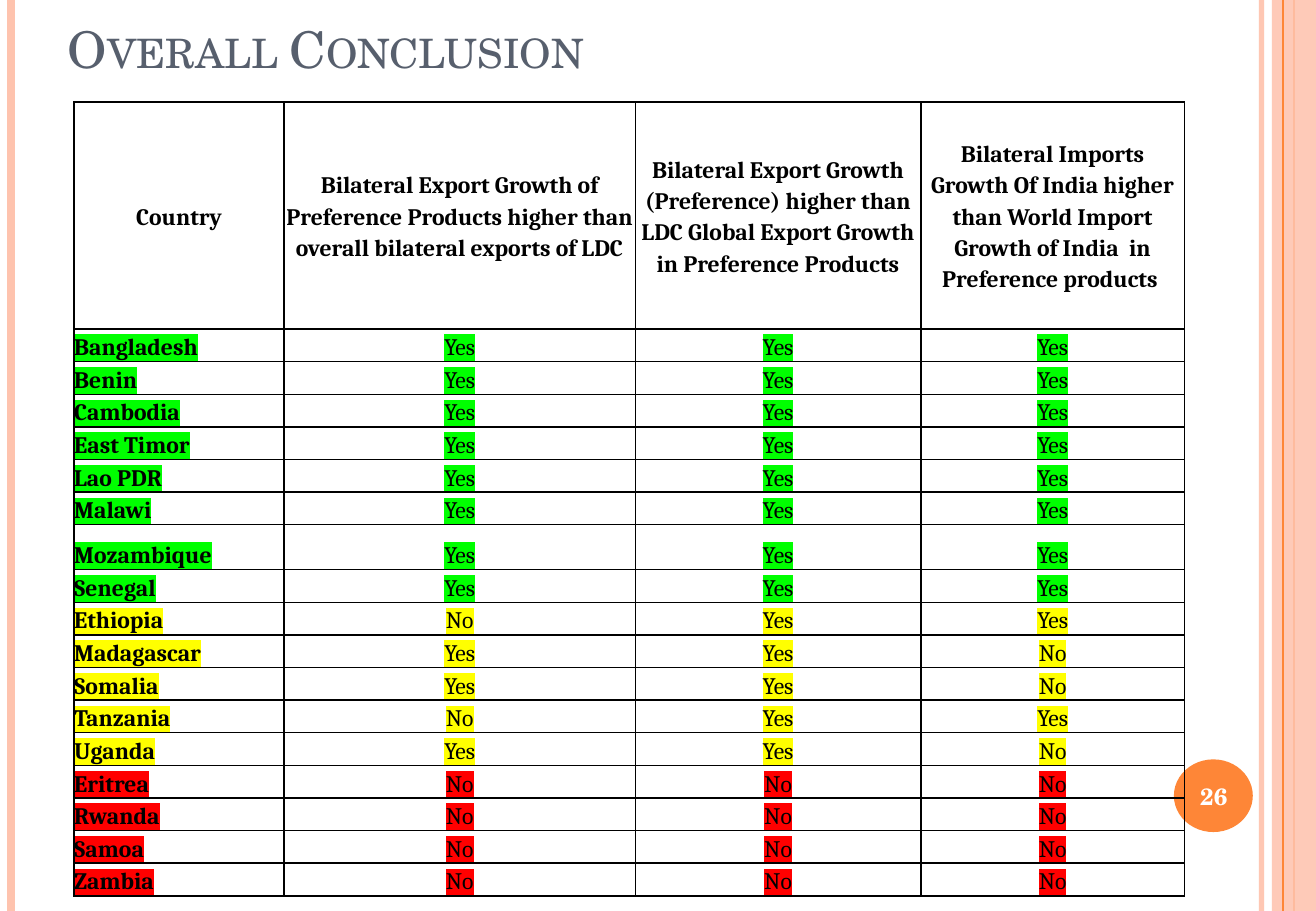
from typing import Any, NamedTuple

from lxml import etree
from pptx import Presentation
from pptx.dml.color import RGBColor
from pptx.enum.shapes import MSO_CONNECTOR, MSO_SHAPE
from pptx.enum.text import MSO_ANCHOR, PP_ALIGN
from pptx.oxml import parse_xml
from pptx.oxml.ns import qn
from pptx.util import Cm, Pt

STRAIGHT = MSO_CONNECTOR.STRAIGHT
RECTANGLE, OVAL = MSO_SHAPE.RECTANGLE, MSO_SHAPE.OVAL
LEFT, CENTER = PP_ALIGN.LEFT, PP_ALIGN.CENTER
MIDDLE, BOTTOM = MSO_ANCHOR.MIDDLE, MSO_ANCHOR.BOTTOM

DRAWING_NS = "http://schemas.openxmlformats.org/drawingml/2006/main"
ORANGE, PEACH, SLATE = "FE8637", "FEC3AE", "575F6D"
BLACK, WHITE = "000000", "FFFFFF"
GREEN, YELLOW, RED = "00FF00", "FFFF00", "FF0000"
TITLE_FONT, TABLE_FONT = "TeX Gyre Schola", "Cambria"
PAGE_WIDTH, PAGE_HEIGHT = 27.51, 19.05
NO_INSETS = dict(margin_left=0, margin_right=0, margin_top=0, margin_bottom=0)


class Stripe(NamedTuple):
    x: float
    colour: str
    points: float
    opacity: int = 100


class Panel(NamedTuple):
    shape: int
    left: float
    top: float
    width: float
    height: float
    colour: str
    opacity: int = 100


class Country(NamedTuple):
    name: str
    verdicts: str  # one Y or N per criterion
    height: float = 0.65


EDGE_STRIPES = [
    Stripe(26.37, PEACH, 3, 93),
    Stripe(0.23, PEACH, 4.5),
    Stripe(27.05, ORANGE, 1.5),
]
INNER_STRIPE = Stripe(26.82, ORANGE, 0.75)
SIDE_BAND = Panel(RECTANGLE, 26.59, 0, 0.92, PAGE_HEIGHT, PEACH, 87)
NUMBER_DISC = Panel(OVAL, 24.54, 15.88, 1.65, 1.52, ORANGE)

COLUMN_WIDTHS = [4.39, 7.34, 5.97, 5.51]
HEADER_HEIGHT = 4.75
HEADERS = [
    "Country",
    "Bilateral Export Growth of Preference Products higher than overall bilateral exports of LDC",
    "Bilateral Export Growth (Preference) higher than LDC Global Export Growth in Preference Products",
    "Bilateral Imports Growth Of India higher than World Import Growth of India  in Preference products ",
]
COUNTRIES = [
    Country("Bangladesh", "YYY"),
    Country("Benin", "YYY"),
    Country("Cambodia", "YYY"),
    Country("East Timor", "YYY"),
    Country("Lao PDR", "YYY"),
    Country("Malawi", "YYY"),
    Country("Mozambique", "YYY", 0.94),
    Country("Senegal", "YYY"),
    Country("Ethiopia", "NYY"),
    Country("Madagascar", "YYN"),
    Country("Somalia", "YYN"),
    Country("Tanzania", "NYY"),
    Country("Uganda", "YYN"),
    Country("Eritrea", "NNN"),
    Country("Rwanda", "NNN"),
    Country("Samoa", "NNN"),
    Country("Zambia", "NNN"),
]
WORDS = {"Y": "Yes", "N": "No"}


def rgb(colour: str) -> RGBColor:
    return RGBColor.from_string(colour)


def apply(target: Any, values: dict) -> None:
    for name, value in values.items():
        setattr(target, name, value)


def set_solid(fill: Any, holder: Any, colour: str, opacity: int) -> None:
    """Fill with a colour; holder is the XML element around the fill."""
    fill.solid()
    fill.fore_color.rgb = rgb(colour)
    if opacity < 100:
        tint = holder.find(f"{qn('a:solidFill')}/{qn('a:srgbClr')}")
        etree.SubElement(tint, qn("a:alpha")).set("val", str(opacity * 1000))


def add_stripe(page: Any, stripe: Stripe) -> None:
    x = Cm(stripe.x)
    line = page.shapes.add_connector(STRAIGHT, x, 0, x, Cm(PAGE_HEIGHT))
    line.line.width = Pt(stripe.points)
    properties = line._element.spPr
    set_solid(line.line.fill, properties.find(qn("a:ln")), stripe.colour, stripe.opacity)
    etree.SubElement(properties, qn("a:effectLst"))


def add_panel(page: Any, panel: Panel) -> None:
    shape = page.shapes.add_shape(panel.shape, *map(Cm, panel[1:5]))
    shape.shadow.inherit = False
    shape.line.fill.background()
    set_solid(shape.fill, shape._element.spPr, panel.colour, panel.opacity)


def write(para: Any, text: str, colour: str, font: str, size: float, bold: bool = False) -> Any:
    span = para.add_run()
    span.text = text
    apply(span.font, dict(name=font, size=Pt(size), bold=bold))
    span.font.color.rgb = rgb(colour)
    return span


def add_box(page: Any, place: tuple, anchor: int, align: int) -> Any:
    """Add a wrapping text box and return its first paragraph."""
    frame = page.shapes.add_textbox(*map(Cm, place)).text_frame
    apply(frame, dict(word_wrap=True, vertical_anchor=anchor))
    frame.paragraphs[0].alignment = align
    return frame.paragraphs[0]


def highlight(span: Any, colour: str) -> None:
    mark = parse_xml(
        f'<a:highlight xmlns:a="{DRAWING_NS}"><a:srgbClr val="{colour}"/></a:highlight>'
    )
    span.font._element.find(qn("a:solidFill")).addnext(mark)


def add_borders(cell: Any) -> None:
    properties = cell._tc.get_or_add_tcPr()
    for index, side in enumerate("LRTB"):
        border = parse_xml(
            f'<a:ln{side} xmlns:a="{DRAWING_NS}" w="{Pt(1)}"><a:solidFill>'
            f'<a:srgbClr val="{BLACK}"/></a:solidFill></a:ln{side}>'
        )
        properties.insert(index, border)


def fill_cell(cell: Any, text: str, anchor: int, align: int, bold: bool, mark: str = "") -> None:
    apply(cell, dict(NO_INSETS, vertical_anchor=anchor))
    cell.fill.background()
    add_borders(cell)
    para = cell.text_frame.paragraphs[0]
    apply(para, dict(alignment=align, line_spacing=1.15))
    span = write(para, text, BLACK, TABLE_FONT, 14, bold)
    if mark:
        highlight(span, mark)


def verdict_colour(verdicts: str) -> str:
    if "N" not in verdicts:
        return GREEN
    return YELLOW if "Y" in verdicts else RED


def add_verdict_table(page: Any) -> None:
    heights = [HEADER_HEIGHT] + [country.height for country in COUNTRIES]
    place = (1.55, 2.13, sum(COLUMN_WIDTHS), sum(heights))
    table = page.shapes.add_table(len(heights), len(HEADERS), *map(Cm, place)).table
    apply(table, dict(first_row=False, horz_banding=False))
    for column, width in zip(table.columns, COLUMN_WIDTHS):
        column.width = Cm(width)
    for row, height in zip(table.rows, heights):
        row.height = Cm(height)
    for index, header in enumerate(HEADERS):
        fill_cell(table.cell(0, index), header, MIDDLE, CENTER, True)
    for row, country in enumerate(COUNTRIES, 1):
        mark = verdict_colour(country.verdicts)
        fill_cell(table.cell(row, 0), country.name, BOTTOM, LEFT, True, mark)
        for column, verdict in enumerate(country.verdicts, 1):
            fill_cell(table.cell(row, column), WORDS[verdict], BOTTOM, CENTER, False, mark)


def main() -> None:
    deck = Presentation()
    apply(deck, dict(slide_width=Cm(PAGE_WIDTH), slide_height=Cm(PAGE_HEIGHT)))
    page = deck.slides.add_slide(deck.slide_layouts[6])
    for stripe in EDGE_STRIPES:
        add_stripe(page, stripe)
    add_panel(page, SIDE_BAND)
    add_stripe(page, INNER_STRIPE)
    add_panel(page, NUMBER_DISC)
    title = add_box(page, (1.17, -0.23, 22.48, 2.01), BOTTOM, LEFT)
    span = write(title, "Overall Conclusion", SLATE, TITLE_FONT, 30)
    span.font._element.set("cap", "small")
    add_verdict_table(page)
    number = add_box(page, (24.46, 15.93, 1.83, 1.45), MIDDLE, CENTER)
    write(number, "26", WHITE, TITLE_FONT, 14, True)
    deck.save("out.pptx")


if __name__ == "__main__":
    main()
